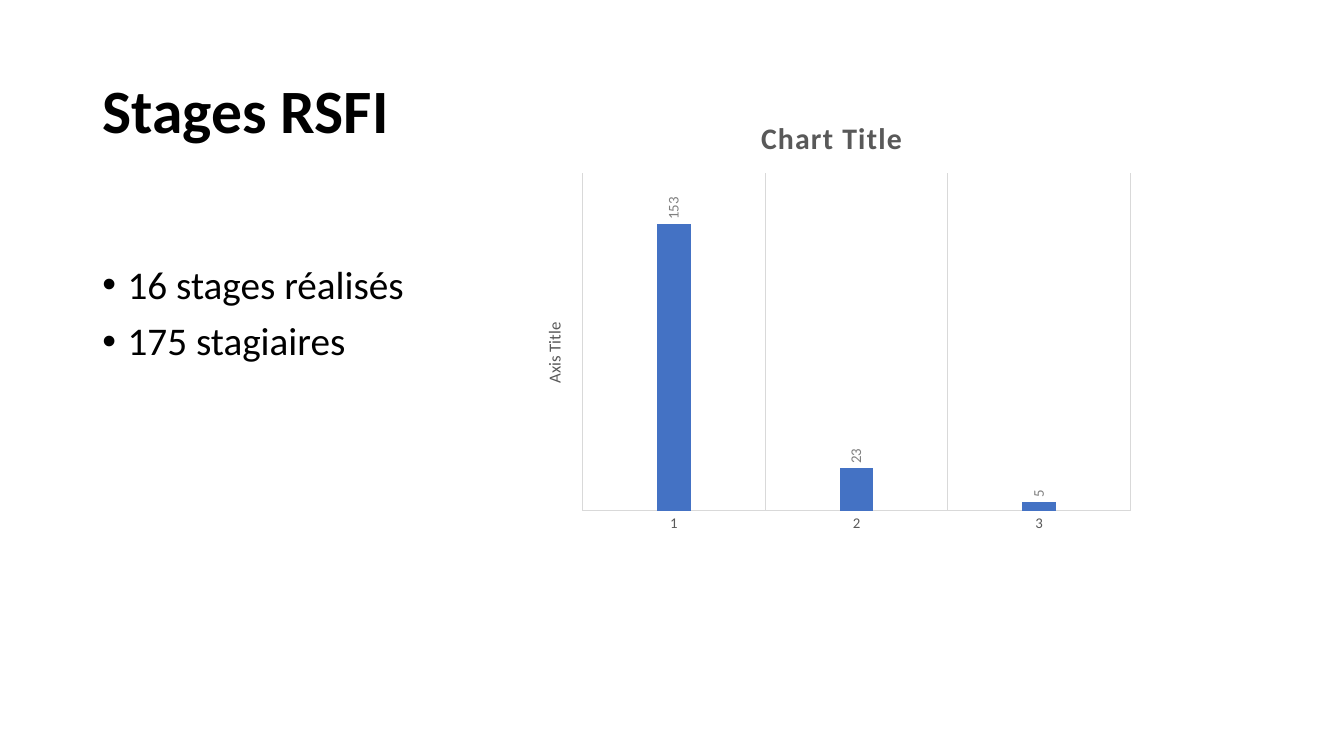
from pptx import Presentation
from pptx.chart.data import CategoryChartData as Data
from pptx.dml.color import RGBColor
from pptx.enum.chart import XL_CHART_TYPE as Kind, XL_LABEL_POSITION as Spot
from pptx.enum.chart import XL_TICK_MARK as Tick
from pptx.enum.text import MSO_ANCHOR as Anchor, PP_ALIGN as Align
from pptx.oxml import parse_xml
from pptx.oxml.ns import nsdecls, qn
from pptx.util import Pt


def tint(code):
    return RGBColor.from_string(code)


class Deck:
    face = "Calibri"
    ink, gray, pale = "000000", "595959", "D9D9D9"
    blue, soft = "4472C4", "808080"

    def __init__(self, wide, high):
        self.prs = Presentation()
        self.prs.slide_width, self.prs.slide_height = Pt(wide), Pt(high)
        self.slide = self.prs.slides.add_slide(self.prs.slide_layouts[1])

    def style(self, font, size, code, bold=False):
        font.name, font.size, font.bold = self.face, Pt(size), bold
        font.color.rgb = tint(code)

    def place(self, shape, box):
        shape.left, shape.top, shape.width, shape.height = map(Pt, box)

    def title(self, text, box):
        shape = self.slide.shapes.title
        self.place(shape, box)
        frame = shape.text_frame
        frame.text = text
        frame.vertical_anchor = Anchor.MIDDLE
        par = frame.paragraphs[0]
        par.alignment, par.line_spacing = Align.LEFT, 0.9
        self.style(par.runs[0].font, 44, self.ink, True)

    def bullets(self, lines, box):
        shape = self.slide.placeholders[1]
        self.place(shape, box)
        frame = shape.text_frame
        frame.text = "\n".join(lines)
        for i, par in enumerate(frame.paragraphs):
            par.line_spacing = 0.9
            par.space_before = Pt(10 if i else 0)
            props = par._p.get_or_add_pPr()
            props.set("marL", str(Pt(18)))
            props.set("indent", str(-Pt(18)))
            self.style(par.runs[0].font, 28, self.ink)

    def caption(self, owner, text, size, bold=False):
        frame = owner.text_frame
        frame.text = text
        font = frame.paragraphs[0].runs[0].font
        self.style(font, size, self.gray, bold)
        return frame, font

    def turn(self, body):
        body.set("rot", "-5400000")
        body.set("vert", "horz")

    def line(self, form):
        form.line.color.rgb = tint(self.pale)
        form.line.width = Pt(0.75)

    def columns(self, cats, vals, box):
        data = Data()
        data.categories = cats
        data.add_series("Series 1", vals)
        chart = self.slide.shapes.add_chart(
            Kind.COLUMN_CLUSTERED, *map(Pt, box), data).chart
        chart.has_legend = False
        self.style(chart.font, 10, self.ink)
        font = self.caption(chart.chart_title, "Chart Title", 21.3, True)[1]
        font._element.set("spc", "100")

        # Bars and their labels
        plot = chart.plots[0]
        plot.vary_by_categories = False
        plot.gap_width, plot.overlap = 444, -90
        bars = plot.series[0]
        bars.format.fill.solid()
        bars.format.fill.fore_color.rgb = tint(self.blue)
        labels = bars.data_labels
        labels.show_value, labels.position = True, Spot.OUTSIDE_END
        self.style(labels.font, 10.6, self.soft)
        self.turn(labels._element.find(".//" + qn("a:bodyPr")))

        # Axes
        across = chart.category_axis
        across.major_tick_mark = across.minor_tick_mark = Tick.NONE
        across.has_major_gridlines = True
        self.line(across.format)
        self.line(across.major_gridlines.format)
        self.style(across.tick_labels.font, 10.6, self.gray)
        up = chart.value_axis
        up.has_major_gridlines, up.visible = False, False
        up.minimum_scale, up.maximum_scale = 0, 180
        frame = self.caption(up.axis_title, "Axis Title", 12)[0]
        self.turn(frame._txBody.find(qn("a:bodyPr")))
        self.inset(chart, x=0.1, y=0.17, w=0.88, h=0.76)

    def inset(self, chart, **parts):
        # Fixed inner plot area, as shares of the chart
        area = chart._chartSpace.find(".//" + qn("c:plotArea"))
        for old in area.findall(qn("c:layout")):
            area.remove(old)
        modes = "".join(f'<c:{k}Mode val="edge"/>' for k in "xy")
        sizes = "".join(f'<c:{k} val="{v}"/>' for k, v in parts.items())
        area.insert(0, parse_xml(
            f'<c:layout {nsdecls("c")}><c:manualLayout>'
            f'<c:layoutTarget val="inner"/>{modes}{sizes}'
            '</c:manualLayout></c:layout>'))


def main():
    deck = Deck(960, 540)
    # Heading and list
    deck.title("Stages RSFI", (66, 28.8, 828, 104.4))
    deck.bullets(["16 stages réalisés", "175 stagiaires"],
                 (66, 186, 783.4, 275.5))
    # Column chart
    deck.columns(["1", "2", "3"], [153, 23, 5], (371.5, 69.8, 445, 317.5))
    deck.prs.save("out.pptx")


if __name__ == "__main__":
    main()
